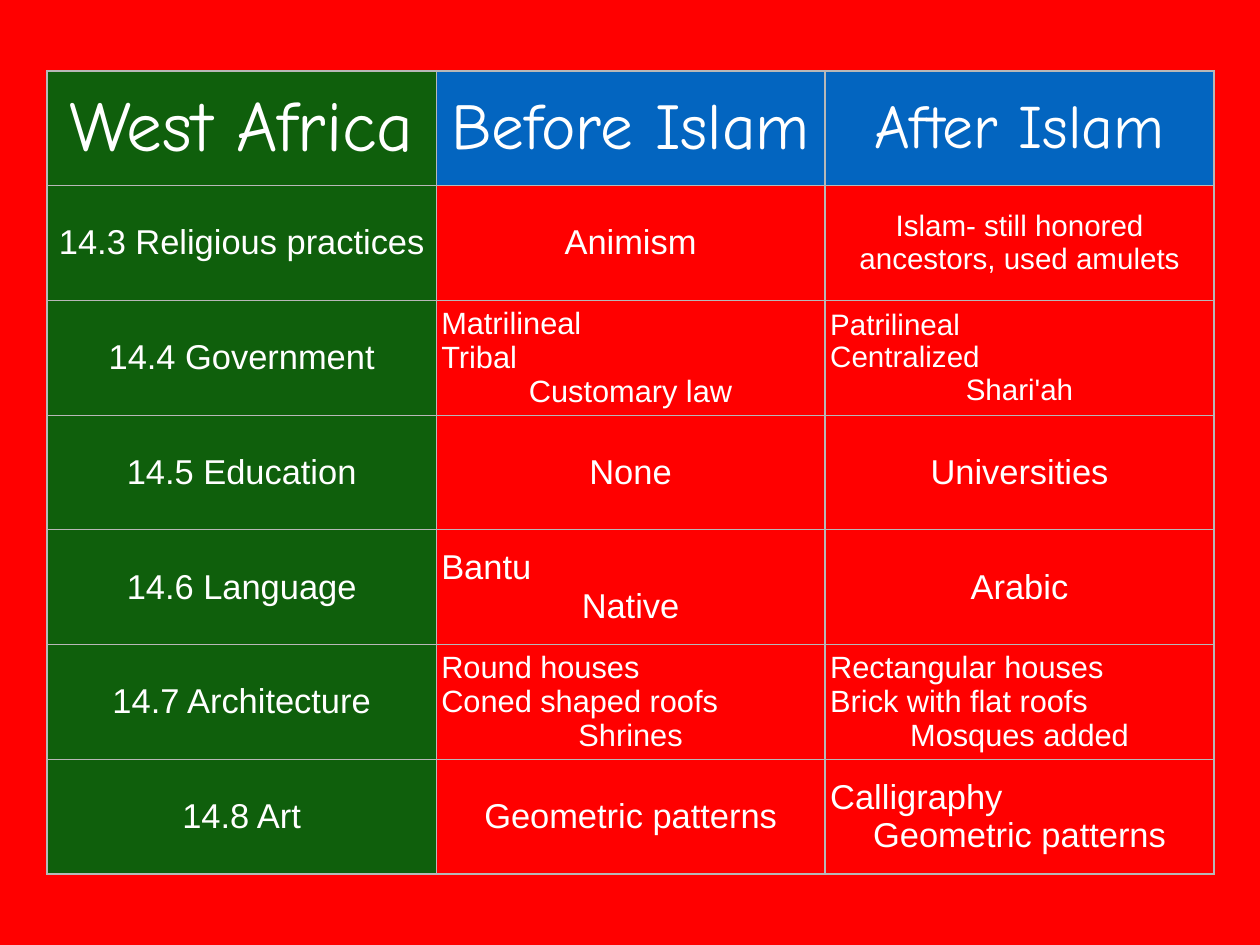
from lxml.etree import SubElement
from pptx import Presentation
from pptx.dml.color import RGBColor
from pptx.enum.text import MSO_ANCHOR, PP_ALIGN
from pptx.oxml.ns import qn
from pptx.util import Cm, Pt

COLORS = {
    "background": "FF0000",
    "topic": "0F5F0C",
    "period": "0365C0",
    "text": "FFFFFF",
    "border": "B8B8B8",
}
HEADINGS = [("West Africa", 58), ("Before Islam", 53), ("After Islam", 50)]
COMPARISONS = [
    [("14.3 Religious practices", 28), ("Animism", 28),
     ("Islam- still honored ancestors, used amulets", 24)],
    [("14.4 Government", 28), ("Matrilineal\nTribal\nCustomary law", 25),
     ("Patrilineal\nCentralized\nShari'ah", 24)],
    [("14.5 Education", 28), ("None", 28), ("Universities", 28)],
    [("14.6 Language", 28), ("Bantu\nNative", 28), ("Arabic", 28)],
    [("14.7 Architecture", 28), ("Round houses\nConed shaped roofs\nShrines", 25),
     ("Rectangular houses\nBrick with flat roofs\nMosques added", 25)],
    [("14.8 Art", 28), ("Geometric patterns", 28),
     ("Calligraphy\nGeometric patterns", 28)],
]


def color(name):
    return RGBColor.from_string(COLORS[name])


def add_border(cell, side, width):
    line = SubElement(cell._tc.get_or_add_tcPr(), qn(f"a:ln{side}"), w=str(Pt(width)))
    fill = SubElement(line, qn("a:solidFill"))
    SubElement(fill, qn("a:srgbClr"), val=COLORS["border"])


def fill_cell(cell, text, size, font_name, fill_name):
    cell.margin_left = cell.margin_right = Cm(0.15)
    cell.margin_top = cell.margin_bottom = Cm(0.15)
    cell.vertical_anchor = MSO_ANCHOR.MIDDLE
    cell.fill.solid()
    cell.fill.fore_color.rgb = color(fill_name)
    cell.text_frame.text = text
    paragraphs = cell.text_frame.paragraphs
    for paragraph in paragraphs:
        paragraph.alignment = PP_ALIGN.LEFT
        for run in paragraph.runs:
            run.font.name = font_name
            run.font.size = Pt(size)
            run.font.bold = False
            run.font.color.rgb = color("text")
    paragraphs[-1].alignment = PP_ALIGN.CENTER


def add_comparison_table(slide, left, top, width, height):
    rows = [HEADINGS] + COMPARISONS
    row_count, column_count = len(rows), len(HEADINGS)
    table = slide.shapes.add_table(row_count, column_count, left, top, width, height).table
    table.first_row = False
    table.horz_banding = False
    for row_index, row in enumerate(rows):
        for column_index, (text, size) in enumerate(row):
            cell = table.cell(row_index, column_index)
            outer_sides = {
                "L": column_index == 0,
                "R": column_index == column_count - 1,
                "T": row_index == 0,
                "B": row_index == row_count - 1,
            }
            for side, is_outer in outer_sides.items():
                add_border(cell, side, 1.5 if is_outer else 1)
            if column_index == 0:
                fill_name = "topic"
            else:
                fill_name = "period" if row_index == 0 else "background"
            font_name = "Comic Neue" if row_index == 0 else "Arial"
            fill_cell(cell, text, size, font_name, fill_name)


def main():
    presentation = Presentation()
    presentation.slide_width = Cm(36.12)
    presentation.slide_height = Cm(27.1)
    slide = presentation.slides.add_slide(presentation.slide_layouts[6])
    slide.background.fill.solid()
    slide.background.fill.fore_color.rgb = color("background")
    add_comparison_table(slide, Cm(1.35), Cm(2.03), Cm(33.45), Cm(23.04))
    presentation.save("out.pptx")


if __name__ == "__main__":
    main()
